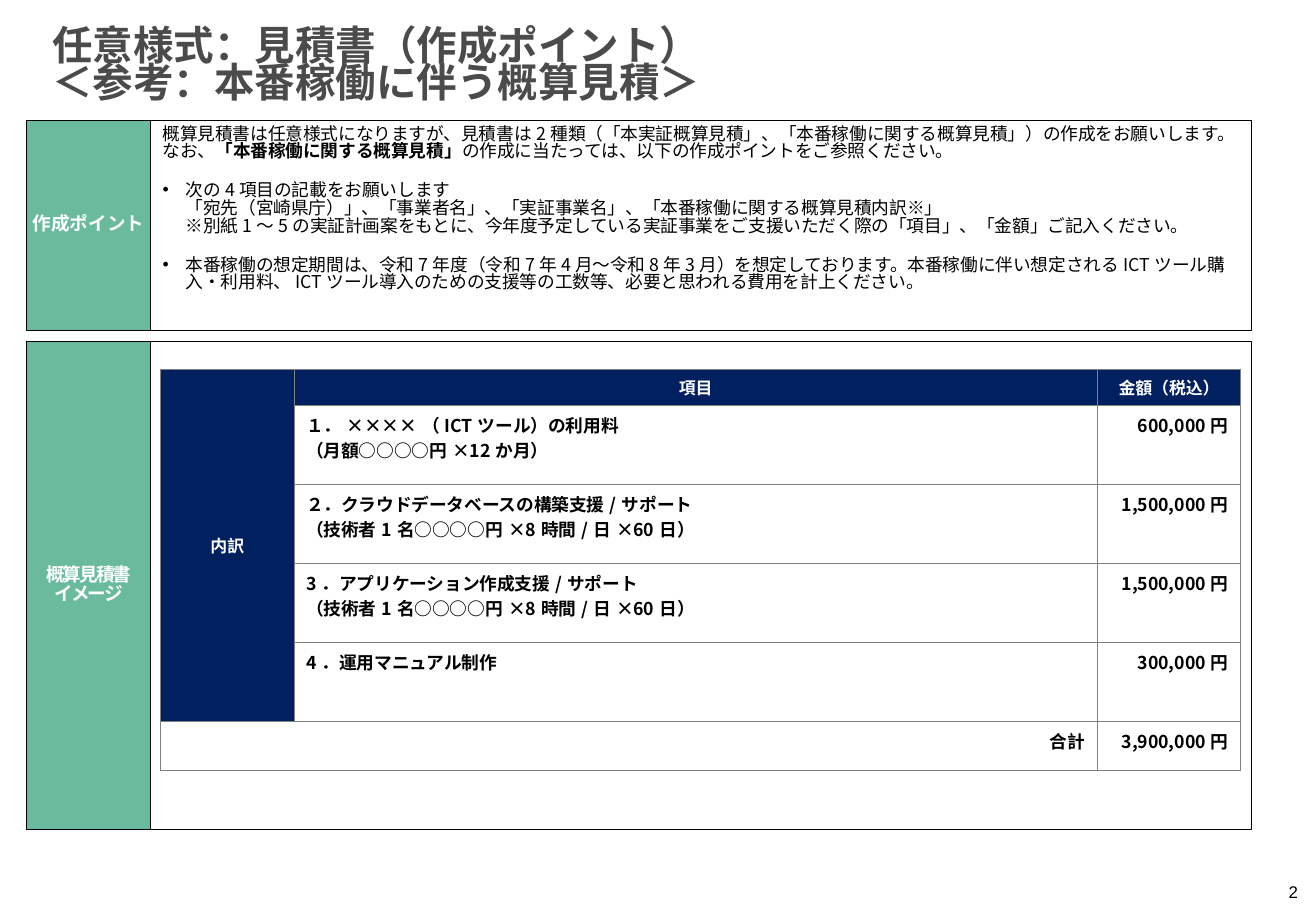
from pptx import Presentation
from pptx.util import Inches, Pt
from pptx.dml.color import RGBColor as RGB
from pptx.enum.shapes import MSO_SHAPE as Shape
from pptx.enum.text import MSO_ANCHOR as Anchor, PP_ALIGN as Align
from pptx.oxml.ns import qn
from lxml.etree import SubElement as Sub
from dataclasses import dataclass

TITLE = ["任意様式：見積書（作成ポイント）\n＜参考：本番稼働に伴う概算見積＞"]
PAGE = ["2"]
INTRO = [
    "概算見積書は任意様式になりますが、見積書は2種類（「本実証概算見積」、「本番稼働に関する概算見積」）の作成をお願いします。",
    ["なお、", "「本番稼働に関する概算見積」", "の作成に当たっては、以下の作成ポイントをご参照ください。"],
]
POINTS = [
    "次の4項目の記載をお願いします\n"
    "「宛先（宮崎県庁）」、「事業者名」、「実証事業名」、「本番稼働に関する概算見積内訳※」\n"
    "※別紙1～5の実証計画案をもとに、今年度予定している実証事業をご支援いただく際の「項目」、「金額」ご記入ください。",
    "本番稼働の想定期間は、令和7年度（令和7年4月～令和8年3月）を想定しております。"
    "本番稼働に伴い想定されるICTツール購入・利用料、ICTツール導入のための支援等の工数等、必要と思われる費用を計上ください。",
]
PANELS = [
    (0.99, 1.73, ["作成ポイント"], 0, INTRO + POINTS),
    (2.81, 4.02, ["概算見積書", "イメージ"], -120, []),
]
HEAD = ("内訳", "項目", "金額（税込）")
ITEMS = [
    (["１．××××（ICTツール）の利用料", "（月額○○○○円×12か月）"], "600,000円"),
    (["２．クラウドデータベースの構築支援/サポート", "（技術者1名○○○○円×8時間/日×60日）"], "1,500,000円"),
    (["3．アプリケーション作成支援/サポート", "（技術者1名○○○○円×8時間/日×60日）"], "1,500,000円"),
    (["4．運用マニュアル制作"], "300,000円"),
]
TOTAL = ("合計", "3,900,000円")
COLS = (1.1, 6.61, 1.18)
ROWS = [0.3] + [0.65] * len(ITEMS) + [0.4]


@dataclass
class Theme:
    font: str = "Noto Sans CJK JP"
    digit: str = "Arial"
    gray: str = "4B4B4B"
    green: str = "45AB85"
    navy: str = "002060"
    white: str = "FFFFFF"
    black: str = "000000"
    rule: str = "808080"
    title: float = 24
    label: float = 11
    body: float = 10.5
    head: float = 10
    line: float = 0.5


T = Theme()


def style(run, size, color, bold=False, font=T.font, track=0):
    run.font.size = Pt(size)
    run.font.bold = bold
    run.font.color.rgb = RGB.from_string(color)
    run.font.name = font
    props = run._r.get_or_add_rPr()
    Sub(props, qn("a:ea"), typeface=font)
    if track:
        props.set("spc", str(track))


def write(frame, lines, size, color, align=Align.LEFT, space=None, **look):
    for i, line in enumerate(lines):
        para = frame.add_paragraph() if i else frame.paragraphs[0]
        para.alignment = align
        para.line_spacing = space
        para.text = line
        for run in para.runs:
            style(run, size, color, **look)


def body(frame, lines):
    for i, line in enumerate(lines):
        para = frame.add_paragraph() if i else frame.paragraphs[0]
        para.alignment = Align.LEFT
        para.line_spacing = 0.83
        if line in POINTS:
            para.space_before = Pt(12.6)
            props = para._p.get_or_add_pPr()
            props.set("marL", str(Inches(0.19)))
            props.set("indent", str(Inches(-0.19)))
            Sub(props, qn("a:buFont"), typeface=T.digit)
            Sub(props, qn("a:buChar"), char="•")
        if isinstance(line, str):
            para.text = line
        else:
            for part in line:
                para.add_run().text = part
        for k, run in enumerate(para.runs):
            style(run, T.body, T.black, bold=not isinstance(line, str) and k == 1)


def text(slide, box, anchor):
    frame = slide.shapes.add_textbox(*map(Inches, box)).text_frame
    frame.word_wrap = True
    frame.vertical_anchor = anchor
    return frame


def rect(slide, box, color):
    shape = slide.shapes.add_shape(Shape.RECTANGLE, *map(Inches, box))
    shape.shadow.inherit = False
    shape.fill.solid()
    shape.fill.fore_color.rgb = RGB.from_string(color)
    shape.line.color.rgb = RGB.from_string(T.black)
    shape.line.width = Pt(T.line)
    shape.text_frame.word_wrap = True
    return shape


def panel(slide, top, high, label, track, lines):
    side = rect(slide, (0.22, top, 1.02, high), T.green)
    Sub(side._element.spPr.find(".//" + qn("a:srgbClr")), qn("a:alpha"), val="80000")
    frame = side.text_frame
    frame.vertical_anchor = Anchor.MIDDLE
    frame.margin_left = frame.margin_right = Inches(0.04)
    frame.margin_top = frame.margin_bottom = Inches(0.04)
    write(frame, label, T.label, T.white, Align.CENTER, 0.85, bold=True, track=track)
    main = rect(slide, (1.24, top, 9.06, high), T.white)
    main.text_frame.vertical_anchor = Anchor.TOP
    body(main.text_frame, lines)


def border(cell):
    props = cell._tc.get_or_add_tcPr()
    for i, edge in enumerate(("lnL", "lnR", "lnT", "lnB")):
        line = Sub(props, qn("a:" + edge), w=str(Pt(T.line)))
        Sub(Sub(line, qn("a:solidFill")), qn("a:srgbClr"), val=T.rule)
        props.insert(i, line)


def table(slide):
    box = (1.32, 3.04, sum(COLS), sum(ROWS))
    grid = slide.shapes.add_table(len(ROWS), len(COLS), *map(Inches, box)).table
    grid.first_row = grid.horz_banding = False
    for col, wide in zip(grid.columns, COLS):
        col.width = Inches(wide)
    for row, high in zip(grid.rows, ROWS):
        row.height = Inches(high)
    last = len(ROWS) - 1
    for r in range(len(ROWS)):
        for c in range(len(COLS)):
            cell = grid.cell(r, c)
            dark = r == 0 or (c == 0 and r < last)
            cell.fill.solid()
            cell.fill.fore_color.rgb = RGB.from_string(T.navy if dark else T.white)
            border(cell)
    grid.cell(0, 0).merge(grid.cell(last - 1, 0))
    grid.cell(last, 0).merge(grid.cell(last, 1))
    grid.cell(0, 0).vertical_anchor = Anchor.MIDDLE

    def fill(r, c, lines, align, size=T.body, color=T.black):
        write(grid.cell(r, c).text_frame, lines, size, color, align, bold=True)

    for c, name in enumerate(HEAD):
        fill(0, c, [name], Align.CENTER, T.head, T.white)
    for r, (lines, cost) in enumerate(ITEMS, 1):
        fill(r, 1, lines, Align.LEFT)
        fill(r, 2, [cost], Align.RIGHT)
    for c, word in zip((0, 2), TOTAL):
        fill(last, c, [word], Align.RIGHT)


def main():
    deck = Presentation()
    deck.slide_width, deck.slide_height = Inches(10.83), Inches(7.5)
    slide = deck.slides.add_slide(deck.slide_layouts[6])
    page = text(slide, (10.17, 7.17, 0.61, 0.35), Anchor.MIDDLE)
    write(page, PAGE, T.head, T.black, Align.RIGHT, font=T.digit)
    title = text(slide, (0.33, 0.4, 10.17, 0.49), Anchor.BOTTOM)
    title.margin_bottom = Inches(0.03)
    write(title, TITLE, T.title, T.gray, space=0.75, bold=True)
    for part in PANELS:
        panel(slide, *part)
    table(slide)
    deck.save("out.pptx")


if __name__ == "__main__":
    main()
